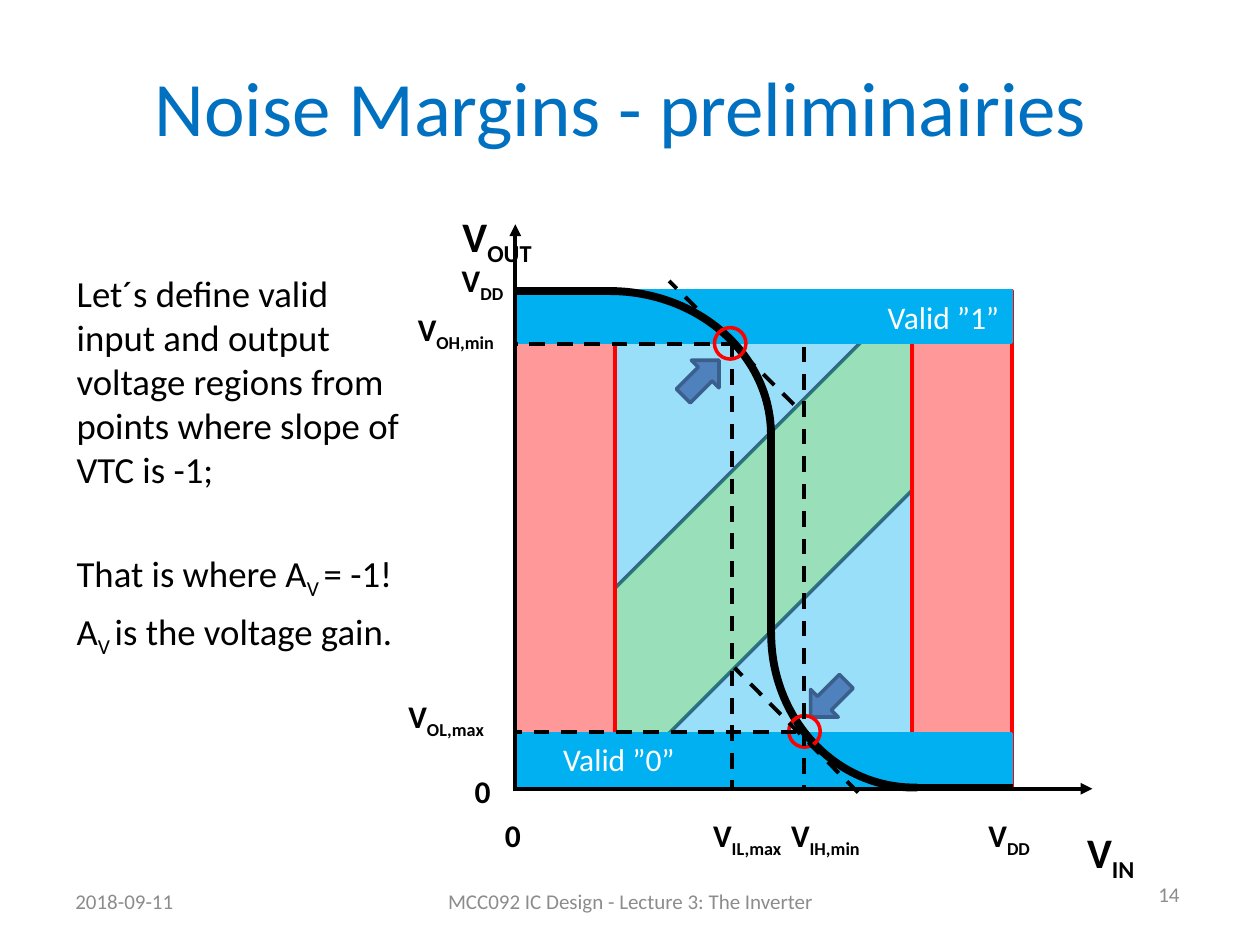
from lxml import etree
from pptx import Presentation
from pptx.dml.color import RGBColor as RGB
from pptx.enum.dml import MSO_LINE
from pptx.enum.shapes import MSO_CONNECTOR, MSO_SHAPE as Kind
from pptx.enum.text import MSO_ANCHOR as Anchor, PP_ALIGN as Align
from pptx.oxml.ns import qn
from pptx.util import Inches, Pt

HUES = {
    "ink": "000000", "paper": "FFFFFF", "title": "0070C0", "foot": "8C8C8C",
    "sky": "00B0F0", "green": "00B050", "red": "FF0000",
    "steel": "4F81BD", "edge": "3A5F8C",
}
LEFT, RIGHT, CENTER = Align.LEFT, Align.RIGHT, Align.CENTER

# Voltage levels on the two axes
X0, XLOW, XHIGH = 4.09, 4.88, 7.24
YTOP, YBASE = 2.31, 6.25
BAND, BAND_H = XHIGH - XLOW, 0.41
XIL, XIH, YOH, YOL = 5.81, 6.38, 2.73, 5.81
SIDE = XLOW - X0


def hue(name):
    return RGB.from_string(HUES[name])


def box(at):
    return [Inches(v) for v in at]


def write(para, runs, size, color, bold=False, align=LEFT, before=0):
    """Add runs to a paragraph; every second run is a subscript."""
    para.alignment = align
    para.space_before = Pt(before)
    for i, text in enumerate(runs):
        run = para.add_run()
        run.text = text
        font = run.font
        font.name, font.size, font.bold = "Calibri", Pt(size), bold
        font.color.rgb = hue(color)
        if i % 2:
            run._r.get_or_add_rPr().set("baseline", "-25000")


def add_text(slide, at, runs, size, color="ink", bold=False, align=LEFT,
             anchor=Anchor.TOP):
    frame = slide.shapes.add_textbox(*box(at)).text_frame
    frame.word_wrap = True
    frame.vertical_anchor = anchor
    write(frame.paragraphs[0], runs, size, color, bold, align)
    return frame


def paint(shape, fill=None, line=None, width=2, alpha=None):
    shape.shadow.inherit = False
    if fill:
        shape.fill.solid()
        shape.fill.fore_color.rgb = hue(fill)
    else:
        shape.fill.background()
    if alpha:
        tone = shape.fill._xPr.find(qn("a:solidFill"))[0]
        etree.SubElement(tone, qn("a:alpha")).set("val", str(alpha * 1000))
    if line:
        shape.line.color.rgb = hue(line)
        shape.line.width = Pt(width)
    else:
        shape.line.fill.background()


def add_shape(slide, kind, at, turn=0, adj=(), **look):
    shape = slide.shapes.add_shape(kind, *box(at))
    shape.rotation = turn
    for i, value in enumerate(adj):
        shape.adjustments[i] = value
    paint(shape, **look)
    return shape


def add_area(slide, points, **look):
    spots = [(Inches(x), Inches(y)) for x, y in points]
    pen = slide.shapes.build_freeform(*spots[0])
    pen.add_line_segments(spots[1:], close=True)
    paint(pen.convert_to_shape(), alpha=40, **look)


def add_line(slide, start, end, width=2.25, dash=False, tip=False):
    line = slide.shapes.add_connector(MSO_CONNECTOR.STRAIGHT,
                                      *box(start + end))
    line.line.color.rgb = hue("ink")
    line.line.width = Pt(width)
    if dash:
        line.line.dash_style = MSO_LINE.DASH
    if tip:
        stroke = line.line._get_or_add_ln()
        etree.SubElement(stroke, qn("a:tailEnd")).set("type", "triangle")
    etree.SubElement(line._element.spPr, qn("a:effectLst"))


def add_band(slide, top, text, align, inset=0.1):
    band = add_shape(slide, Kind.RECTANGLE, (X0, top, 3.94, BAND_H),
                     fill="sky", line="sky")
    frame = band.text_frame
    frame.margin_left = Inches(inset)
    frame.vertical_anchor = Anchor.MIDDLE
    write(frame.paragraphs[0], [text], 18, "paper", align=align)


def add_body(slide):
    frame = add_text(slide, (0.51, 2.1, 2.83, 3.39), [], 21)
    paras = [
        (4.2, ["Let´s define valid input and output voltage regions from "
               "points where slope of VTC is -1;"]),
        (34, ["That is where A", "V ", "= -1!"]),
        (4.2, ["A", "V ", "is the voltage gain."]),
    ]
    for i, (gap, runs) in enumerate(paras):
        para = frame.add_paragraph() if i else frame.paragraphs[0]
        write(para, runs, 21, "ink", before=gap)


def add_frame(slide):
    add_text(slide, (0.43, 0.21, 9, 1.25), ["Noise Margins - preliminairies"],
             44, "title", align=CENTER, anchor=Anchor.MIDDLE)
    for at, text, align in [
        ((0.5, 6.95, 2.33, 0.4), "2018-09-11", LEFT),
        ((3.42, 6.95, 3.17, 0.4),
         "MCC092 IC Design - Lecture 3: The Inverter", CENTER),
        ((7.13, 6.9, 2.33, 0.4), "14", RIGHT),
    ]:
        add_text(slide, at, [text], 12, "foot", align=align,
                 anchor=Anchor.MIDDLE)


def add_labels(slide):
    for x, y, wide, size, align, runs in [
        (8.39, 6.51, 0.85, 24, CENTER, ["V", "IN"]),
        (3.52, 1.62, 0.85, 24, CENTER, ["V", "OUT"]),
        (7.68, 6.43, 0.66, 18, CENTER, ["V", "DD"]),
        (3.5, 2.02, 0.66, 18, CENTER, ["V", "DD"]),
        (3.74, 6.43, 0.66, 18, CENTER, ["0"]),
        (3.5, 6.08, 0.66, 18, CENTER, ["0"]),
        (5.24, 6.43, 1.06, 18, RIGHT, ["V", "IL,max"]),
        (6.18, 6.43, 1.2, 18, LEFT, ["V", "IH,min"]),
        (3.11, 2.41, 0.91, 18, RIGHT, ["V", "OH,min"]),
        (3.03, 5.48, 0.91, 18, RIGHT, ["V", "OL,max"]),
    ]:
        tall = 0.5 if size == 24 else 0.4
        add_text(slide, (x, y, wide, tall), runs, size, bold=True, align=align)


def add_regions(slide):
    low, high = YBASE - BAND, YTOP + BAND
    add_area(slide, [(XLOW, YBASE), (XHIGH, low), (XHIGH, YBASE)],
             fill="sky", line="edge")
    add_area(slide, [(XHIGH, YTOP), (XLOW, high), (XLOW, YTOP)],
             fill="sky", line="edge")
    add_area(slide, [(XLOW, high), (XHIGH, YTOP), (XHIGH, low),
                     (XLOW, YBASE)], fill="green")
    for x in (XHIGH, X0):
        add_shape(slide, Kind.RECTANGLE, (x, YTOP, SIDE, YBASE - YTOP),
                  fill="red", line="red", alpha=40)
    add_line(slide, (4.07, 6.26), (8.67, 6.26), tip=True)
    add_band(slide, 5.82, "Valid ”0”", LEFT, 0.38)
    add_band(slide, YTOP, "Valid ”1”", RIGHT)
    add_line(slide, (X0, 6.28), (X0, 1.78), tip=True)


def add_curve(slide):
    look = dict(line="ink", width=4.5)
    add_line(slide, (XLOW, YTOP), (X0, YTOP), 4.5)
    add_shape(slide, Kind.ARC, (3.56, YTOP, 2.56, 2.28), adj=(161.7, 0),
              **look)
    add_line(slide, (6.12, 3.44), (6.12, 5.02), 4.5)
    add_line(slide, (8.04, YBASE), (7.25, YBASE), 4.5)
    add_shape(slide, Kind.ARC, (6.12, 3.81, 2.27, 2.44), 180, (161.3, 0.42),
              **look)


def add_marks(slide):
    """Point out where the slope is -1 and project it on the axes."""
    for x, y, turn in [(5.41, 2.8, 225), (6.42, 5.35, 45)]:
        add_shape(slide, Kind.DOWN_ARROW, (x, y, 0.31, 0.4), turn,
                  fill="steel", line="edge")
    for x, y in [(5.67, 2.6), (6.26, 5.68)]:
        add_shape(slide, Kind.OVAL, (x, y, 0.25, 0.25), line="red")
    for start, end in [
        ((6.3, 3.21), (5.31, 2.23)), ((6.81, 6.29), (5.83, 5.3)),
        ((6.32, YOL), (X0, YOL)), ((XIH, 2.75), (XIH, 6.26)),
        ((XIL, 2.71), (XIL, 6.26)), ((5.85, YOH), (X0, YOH)),
    ]:
        add_line(slide, start, end, dash=True)


def main():
    deck = Presentation()
    deck.slide_width, deck.slide_height = Inches(10), Inches(7.5)
    slide = deck.slides.add_slide(deck.slide_layouts[6])
    for draw in (add_body, add_frame, add_labels, add_regions, add_curve,
                 add_marks):
        draw(slide)
    deck.save("out.pptx")


if __name__ == "__main__":
    main()
